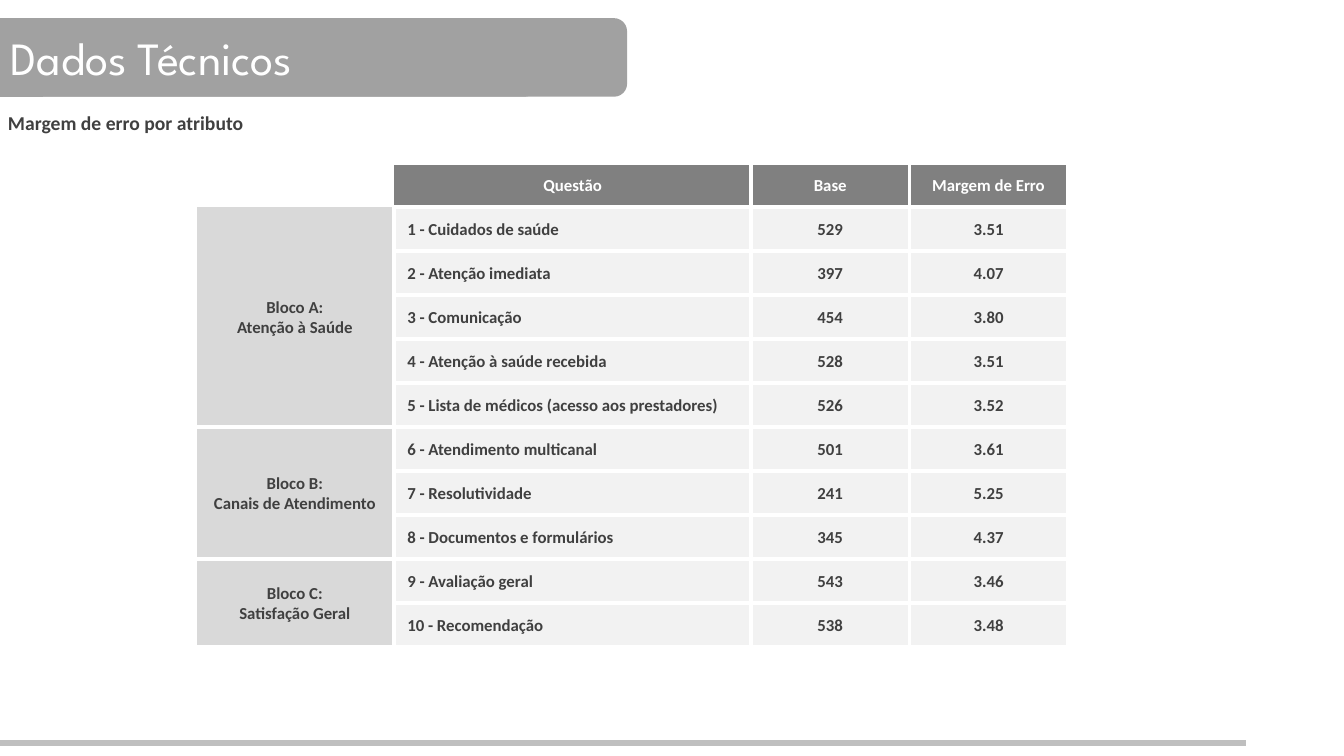
from dataclasses import dataclass
from itertools import accumulate

from lxml.etree import SubElement
from pptx import Presentation
from pptx.dml.color import RGBColor
from pptx.enum.shapes import MSO_CONNECTOR, MSO_SHAPE
from pptx.enum.text import MSO_ANCHOR, MSO_AUTO_SIZE, PP_ALIGN
from pptx.oxml import parse_xml
from pptx.oxml.ns import nsdecls, qn
from pptx.util import Inches, Pt


@dataclass(frozen=True)
class Theme:
    """Colours, fonts and sizes of the slide."""
    bar: str = "A1A1A1"
    rule: str = "BFBFBF"
    head: str = "808080"
    block: str = "D9D9D9"
    body: str = "F2F2F2"
    white: str = "FFFFFF"
    ink: str = "404040"
    title_font: str = "League Spartan"
    text_font: str = "Calibri"
    title_size: float = 33
    subtitle_size: float = 14
    cell_size: float = 12
    rule_width: float = 4.5
    border_width: float = 3


T = Theme()
WIDTH, HEIGHT = Inches(13.33), Inches(7.5)
COLUMNS = (14.78, 26.56, 11.78, 11.78)
ROW = 5.82
HEADINGS = ("Questão", "Base", "Margem de Erro")
BLOCKS = (
    ("Bloco A:\nAtenção à Saúde", (
        ("1 - Cuidados de saúde", "529", "3.51"),
        ("2 - Atenção imediata", "397", "4.07"),
        ("3 - Comunicação", "454", "3.80"),
        ("4 - Atenção à saúde recebida", "528", "3.51"),
        ("5 - Lista de médicos (acesso aos prestadores)", "526", "3.52"))),
    ("Bloco B:\nCanais de Atendimento", (
        ("6 - Atendimento multicanal", "501", "3.61"),
        ("7 - Resolutividade", "241", "5.25"),
        ("8 - Documentos e formulários", "345", "4.37"))),
    ("Bloco C:\nSatisfação Geral", (
        ("9 - Avaliação geral", "543", "3.46"),
        ("10 - Recomendação", "538", "3.48"))),
)


def across(share):
    """Turn a percentage of the slide's width into a length."""
    return int(WIDTH * share / 100)


def down(share):
    """Turn a percentage of the slide's height into a length."""
    return int(HEIGHT * share / 100)


def place(x, y, w, h):
    """Turn a box in percentages into four lengths."""
    return across(x), down(y), across(w), down(h)


def apply(target, formats):
    """Set attributes from a dict of format values."""
    for name, value in formats.items():
        setattr(target, name, value)


def style(p, font, size, color, bold=False, align=PP_ALIGN.LEFT):
    """Format a paragraph and its runs."""
    p.alignment = align
    for r in p.runs:
        apply(r.font, {"name": font, "size": Pt(size), "bold": bold})
        r.font.color.rgb = RGBColor.from_string(color)


def add_bar(s, box, text=""):
    """Add a rounded bar, with a title if given."""
    sp = s.shapes.add_shape(MSO_SHAPE.ROUNDED_RECTANGLE, *place(*box))
    sp.shadow.inherit = False
    sp.fill.solid()
    sp.fill.fore_color.rgb = RGBColor.from_string(T.bar)
    sp.line.fill.background()
    if text:
        tf = sp.text_frame
        apply(tf, {"text": text, "word_wrap": True,
                   "vertical_anchor": MSO_ANCHOR.MIDDLE})
        style(tf.paragraphs[0], T.title_font, T.title_size, T.white)


def add_rule(s, x1, x2, y):
    """Add a horizontal rule."""
    cx = s.shapes.add_connector(MSO_CONNECTOR.STRAIGHT, across(x1), down(y),
                                across(x2), down(y))
    cx.line.color.rgb = RGBColor.from_string(T.rule)
    cx.line.width = Pt(T.rule_width)
    SubElement(cx._element.spPr, qn("a:effectLst"))


def add_subtitle(s, box, text):
    """Add the line of text below the title."""
    tf = s.shapes.add_textbox(*place(*box)).text_frame
    apply(tf, {"text": text, "word_wrap": True,
               "auto_size": MSO_AUTO_SIZE.SHAPE_TO_FIT_TEXT,
               "margin_left": Inches(0.11), "margin_right": Inches(0.11),
               "margin_top": Inches(0.06), "margin_bottom": Inches(0.06)})
    style(tf.paragraphs[0], T.text_font, T.subtitle_size, T.ink, True)


def set_borders(cell, sides):
    """Draw white borders on the named sides and none on the others."""
    tc_pr = cell._tc.get_or_add_tcPr()
    for i, side in enumerate("LRTB"):
        color = f'<a:solidFill><a:srgbClr val="{T.white}"/></a:solidFill>'
        fill = color if side in sides else "<a:noFill/>"
        tc_pr.insert(i, parse_xml(
            f'<a:ln{side} {nsdecls("a")} w="{Pt(T.border_width)}">{fill}</a:ln{side}>'))


def fill_cell(cell, text, fill, color=T.ink, left=False, sides="LRTB"):
    """Write and format one cell."""
    apply(cell, {"text": text, "vertical_anchor": MSO_ANCHOR.MIDDLE,
                 "margin_left": Inches(0.01), "margin_right": Inches(0.01),
                 "margin_top": Inches(0.01), "margin_bottom": 0})
    cell.fill.solid()
    cell.fill.fore_color.rgb = RGBColor.from_string(fill)
    set_borders(cell, sides)
    for p in cell.text_frame.paragraphs:
        style(p, T.text_font, T.cell_size, color, True,
              PP_ALIGN.LEFT if left else PP_ALIGN.CENTER)
        if left:
            p._p.get_or_add_pPr().set("marL", str(Inches(0.12)))


def add_margins_table(s, x, y):
    """Add the table of error margins, grouped by block."""
    sizes = [len(questions) for _, questions in BLOCKS]
    rows = 1 + sum(sizes)
    box = place(x, y, sum(COLUMNS), ROW * rows)
    table = s.shapes.add_table(rows, len(COLUMNS), *box).table
    apply(table, {"first_row": False, "horz_banding": False})
    for column, width in zip(table.columns, COLUMNS):
        column.width = across(width)
    table.cell(0, 0).fill.background()
    set_borders(table.cell(0, 0), "")
    for c, heading in enumerate(HEADINGS, 1):
        fill_cell(table.cell(0, c), heading, T.head, T.white,
                  sides="RTB" if c == 1 else "LRTB")
    for first, (name, questions) in zip(accumulate(sizes, initial=1), BLOCKS):
        last = first + len(questions) - 1
        for row, values in enumerate(questions, first):
            fill_cell(table.cell(row, 0), name if row == first else "", T.block,
                      sides="LRB" if row == 1 else "LRTB")
            for c, value in enumerate(values, 1):
                fill_cell(table.cell(row, c), value, T.body, left=c == 1)
        table.cell(first, 0).merge(table.cell(last, 0))


def main():
    """Build the slide and save it."""
    prs = Presentation()
    apply(prs, {"slide_width": WIDTH, "slide_height": HEIGHT})
    s = prs.slides.add_slide(prs.slide_layouts[6])
    add_bar(s, (-2.03, 2.4, 48.69, 10.4))
    add_rule(s, 0, 92.72, 98.27)
    add_bar(s, (-0.23, 2.4, 40.21, 10.4), "Dados Técnicos")
    add_margins_table(s, 14.55, 21.6)
    add_subtitle(s, (-0.23, 13.87, 22.43, 4.67), "Margem de erro por atributo")
    prs.save("out.pptx")


if __name__ == "__main__":
    main()
